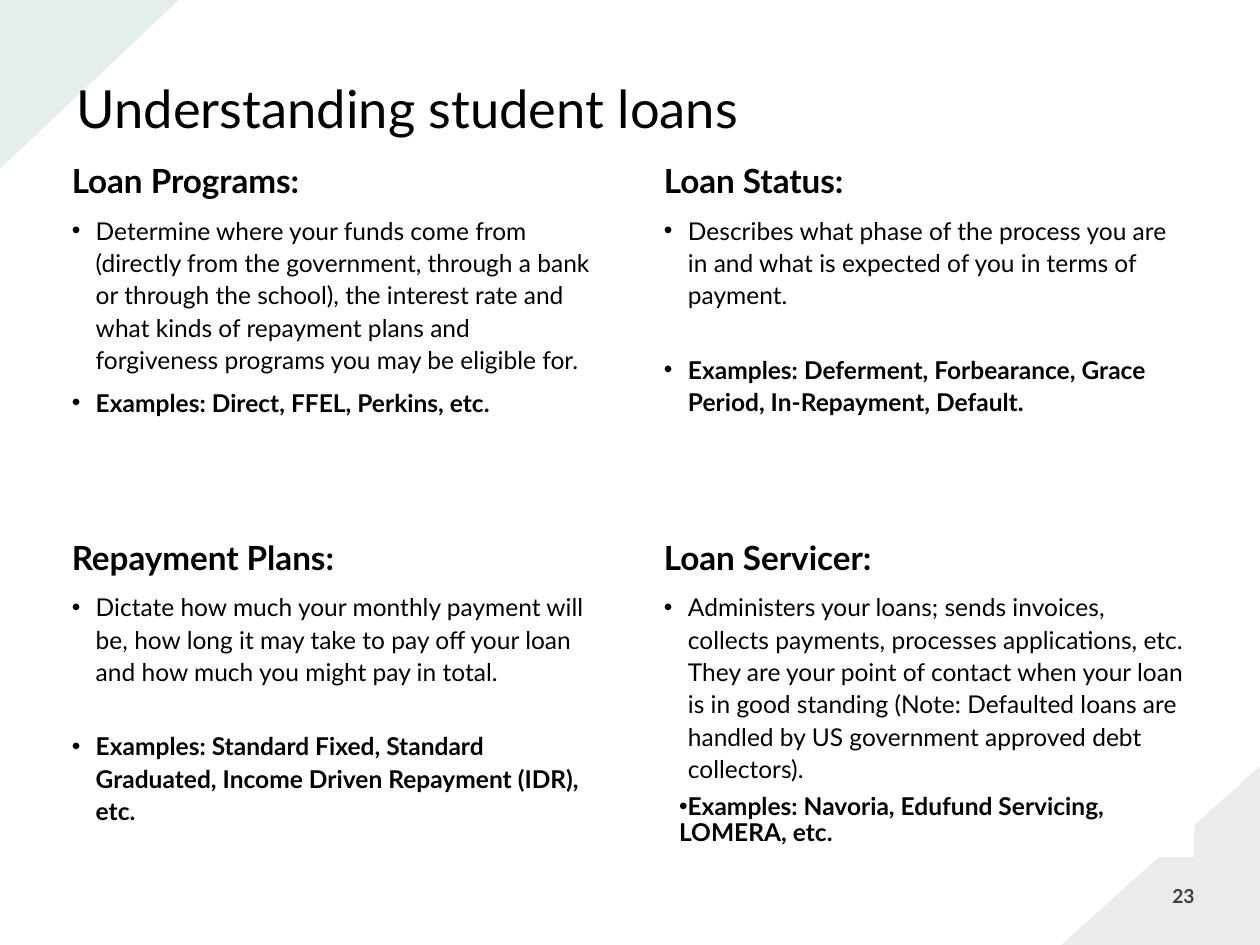
from dataclasses import dataclass

from lxml.etree import SubElement
from pptx import Presentation
from pptx.dml.color import RGBColor
from pptx.enum.shapes import MSO_SHAPE
from pptx.enum.text import MSO_ANCHOR, MSO_AUTO_SIZE, PP_ALIGN
from pptx.oxml.ns import qn
from pptx.util import Inches, Pt


@dataclass(frozen=True)
class Theme:
    font: str = "Lato"
    black: RGBColor = RGBColor(0x00, 0x00, 0x00)
    white: RGBColor = RGBColor(0xFF, 0xFF, 0xFF)
    grey: RGBColor = RGBColor(0x41, 0x40, 0x42)
    green: RGBColor = RGBColor(0x05, 0x68, 0x39)
    title: int = 30
    heading: int = 19
    body: int = 14
    number: int = 11


theme = Theme()

# Panel grid, in inches
LEFT, TOP = 0.51, 1.25
PANEL_WIDTH, PANEL_HEIGHT = 4.27, 2.56
COLUMN_STEP, ROW_STEP = 4.7, 2.99
INSET = 0.06

# Heading, description, examples, space after the description
PANELS = [
    ("Loan Programs:",
     "Determine where your funds come from (directly from the government, through a bank "
     "or through the school), the interest rate and what kinds of repayment plans and "
     "forgiveness programs you may be eligible for.",
     "Examples: Direct, FFEL, Perkins, etc.", 6),
    ("Loan Status:",
     "Describes what phase of the process you are in and what is expected of you in terms "
     "of payment.",
     "Examples: Deferment, Forbearance, Grace Period, In-Repayment, Default.", 24),
    ("Repayment Plans:",
     "Dictate how much your monthly payment will be, how long it may take to pay off your "
     "loan and how much you might pay in total.",
     "Examples: Standard Fixed, Standard Graduated, Income Driven Repayment (IDR), etc.", 24),
    ("Loan Servicer:",
     "Administers your loans; sends invoices, collects payments, processes applications, "
     "etc. They are your point of contact when your loan is in good standing (Note: "
     "Defaulted loans are handled by US government approved debt collectors).",
     "Examples: Navoria, Edufund Servicing, LOMERA, etc.", 6),
]


def style(paragraph, size, bold=False, color=theme.black, spacing=0.9, after=0):
    paragraph.line_spacing = spacing
    paragraph.space_before = Pt(0)
    paragraph.space_after = Pt(after)
    font = paragraph.font
    font.name, font.size, font.bold = theme.font, Pt(size), bold
    font.color.rgb = color


def set_bullet(paragraph, margin, indent, character=None):
    properties = paragraph._p.get_or_add_pPr()
    properties.set("marL", str(Inches(margin)))
    properties.set("indent", str(Inches(indent)))
    if character:
        SubElement(properties, qn("a:buFont"), typeface="Arial")
        SubElement(properties, qn("a:buChar"), char=character)
    else:
        SubElement(properties, qn("a:buNone"))


presentation = Presentation()
presentation.slide_width, presentation.slide_height = Inches(10), Inches(7.5)
comparison_layout = presentation.slide_layouts[4]
slide = presentation.slides.add_slide(comparison_layout)

# Corner triangles, behind everything else
corners = [
    (0.04, -0.04, 1.34, 1.42, 90, False, theme.green),
    (8.42, 6.08, 1.58, 1.42, 180, True, theme.grey),
]
for position, (left, top, width, height, angle, flipped, color) in enumerate(corners):
    triangle = slide.shapes.add_shape(
        MSO_SHAPE.RIGHT_TRIANGLE, Inches(left), Inches(top), Inches(width), Inches(height))
    triangle.shadow.inherit = False
    triangle.rotation = angle
    if flipped:
        triangle._element.spPr.xfrm.set("flipV", "1")
    triangle.fill.solid()
    triangle.fill.fore_color.rgb = color
    color_element = triangle._element.spPr.find(qn("a:solidFill"))[0]
    SubElement(color_element, qn("a:alpha"), val="10000")
    triangle.line.fill.background()
    slide.shapes._spTree.insert(2 + position, triangle._element)

# Title
title = slide.shapes.title
title.left, title.top = Inches(LEFT), Inches(0.44)
title.width, title.height = Inches(8.5), Inches(0.72)
title.text_frame.text = "Understanding student loans"
title.text_frame.auto_size = MSO_AUTO_SIZE.NONE
title.text_frame.vertical_anchor = MSO_ANCHOR.BOTTOM
title.text_frame.paragraphs[0].alignment = PP_ALIGN.LEFT
style(title.text_frame.paragraphs[0], theme.title)

# Four panels, two by two
bodies = [shape for shape in slide.placeholders if shape.placeholder_format.idx in range(1, 5)]
for index, (body, content) in enumerate(zip(bodies, PANELS)):
    row, column = divmod(index, 2)
    heading, description, examples, gap = content
    body.left = Inches(LEFT + column * COLUMN_STEP)
    body.top = Inches(TOP + row * ROW_STEP)
    body.width, body.height = Inches(PANEL_WIDTH), Inches(PANEL_HEIGHT)
    body.fill.solid()
    body.fill.fore_color.rgb = theme.white

    frame = body.text_frame
    frame.auto_size = MSO_AUTO_SIZE.NONE
    frame.vertical_anchor = MSO_ANCHOR.TOP
    frame.margin_left = frame.margin_right = Inches(INSET)
    frame.margin_top = frame.margin_bottom = Inches(INSET)
    frame.text = "\n".join([heading, description, examples])
    heading_line, description_line, examples_line = frame.paragraphs

    set_bullet(heading_line, 0, 0)
    style(heading_line, theme.heading, bold=True, after=6.65)

    description_line.level = examples_line.level = 1
    set_bullet(description_line, 0.19, -0.19, "•")
    style(description_line, theme.body, spacing=1.1, after=gap)

    # The last panel sets its examples tighter, without a hanging indent
    is_last = index == len(PANELS) - 1
    set_bullet(examples_line, *((0.12, 0) if is_last else (0.19, -0.19)), "•")
    style(examples_line, theme.body, bold=True, spacing=0.9 if is_last else 1.1)

# Slide number
number = slide.shapes.add_textbox(Inches(7.33), Inches(6.97), Inches(2.25), Inches(0.4))
number.text_frame.word_wrap = True
number.text_frame.text = "23"
number_line = number.text_frame.paragraphs[0]
number_line.alignment = PP_ALIGN.RIGHT
style(number_line, theme.number, bold=True, color=theme.grey, spacing=1.0)

presentation.save("out.pptx")
